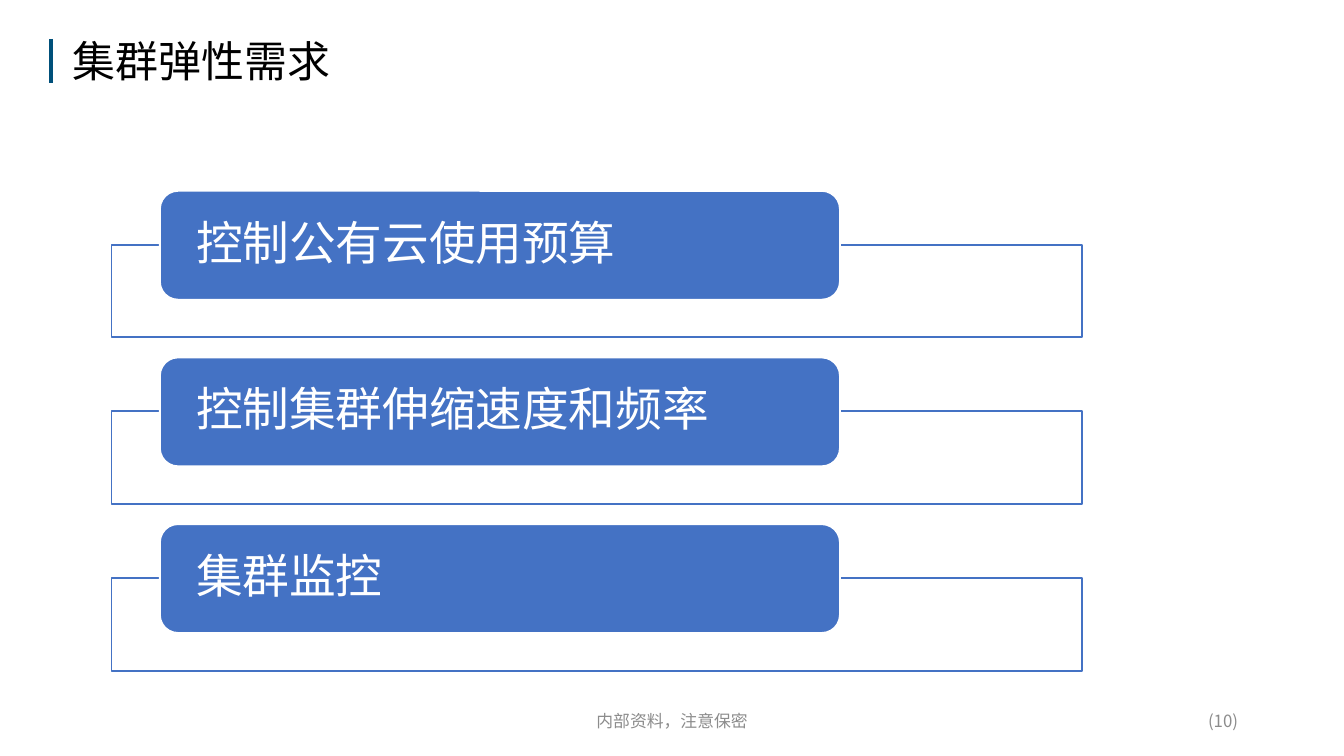
"""Build the slide on cluster elasticity requirements."""
from dataclasses import dataclass

from lxml.etree import SubElement
from pptx import Presentation
from pptx.dml.color import RGBColor
from pptx.enum.shapes import MSO_CONNECTOR, MSO_SHAPE
from pptx.enum.text import MSO_ANCHOR, PP_ALIGN
from pptx.oxml.ns import qn
from pptx.util import Inches, Pt


@dataclass(frozen=True)
class Theme:
    """Colours, font and type sizes."""
    font: str = "Noto Sans CJK SC"
    accent: RGBColor = RGBColor(0x44, 0x72, 0xC4)
    marker: RGBColor = RGBColor(0x00, 0x50, 0x7A)
    white: RGBColor = RGBColor(0xFF, 0xFF, 0xFF)
    black: RGBColor = RGBColor(0x00, 0x00, 0x00)
    muted: RGBColor = RGBColor(0x8C, 0x8C, 0x8C)
    title: Pt = Pt(23)
    body: Pt = Pt(25)
    small: Pt = Pt(9)


theme = Theme()
deck = Presentation()
deck.slide_width, deck.slide_height = Inches(10), Inches(5.625)
unit = deck.slide_width // 100
page = deck.slides.add_slide(deck.slide_layouts[5])


def grid(*cells):
    """Turn grid units, each a hundredth of the slide width, into lengths."""
    return [round(cell * unit) for cell in cells]


def write(box, text, size, color, align, spacing=1.0):
    """Fill a box with one formatted, vertically centred paragraph."""
    frame = box.text_frame
    frame.text = text
    frame.word_wrap = True
    frame.vertical_anchor = MSO_ANCHOR.MIDDLE
    para = frame.paragraphs[0]
    para.alignment, para.line_spacing = align, spacing
    span = para.runs[0]
    span.font.size, span.font.name = size, theme.font
    span.font.color.rgb = color
    SubElement(span.font._element, qn("a:ea"), typeface=theme.font)


marker = page.shapes.add_connector(MSO_CONNECTOR.STRAIGHT, *grid(3.8, 2.9, 3.8, 6.2))
marker.line.color.rgb, marker.line.width = theme.marker, Pt(2.25)
SubElement(marker._element.spPr, qn("a:effectLst"))

title = page.shapes.title
title.left, title.top, title.width, title.height = grid(4.4, 2.5, 49, 4.5)
write(title, "集群弹性需求", theme.title, theme.black, PP_ALIGN.LEFT, 0.9)

footers = [
    ("内部资料，注意保密", 33.1, 33.8, PP_ALIGN.CENTER),
    ("(10)", 70.6, 22.5, PP_ALIGN.RIGHT),
]
for text, left, width, align in footers:
    footer = page.shapes.add_textbox(*grid(left, 52.1, width, 3))
    write(footer, text, theme.small, theme.muted, align)

requirements = ["控制公有云使用预算", "控制集群伸缩速度和频率", "集群监控"]
for index, text in enumerate(requirements):
    top = 14.2 + 12.4 * index
    panel = page.shapes.add_shape(MSO_SHAPE.RECTANGLE, *grid(8.3, top + 4, 72.2, 6.9))
    label = page.shapes.add_shape(MSO_SHAPE.ROUNDED_RECTANGLE, *grid(11.9, top, 50.6, 8.1))
    for shape, fill, line in [(panel, theme.white, theme.accent), (label, theme.accent, theme.white)]:
        shape.shadow.inherit = False
        shape.fill.solid()
        shape.fill.fore_color.rgb = fill
        shape.line.color.rgb, shape.line.width = line, Pt(1)
    panel_color = panel._element.spPr.find(qn("a:solidFill")).find(qn("a:srgbClr"))
    SubElement(panel_color, qn("a:alpha"), val="90000")
    frame = label.text_frame
    frame.margin_left = frame.margin_right = Inches(0.23)
    frame.margin_top = frame.margin_bottom = 0
    write(label, text, theme.body, theme.white, PP_ALIGN.LEFT, 0.9)

deck.save("out.pptx")
